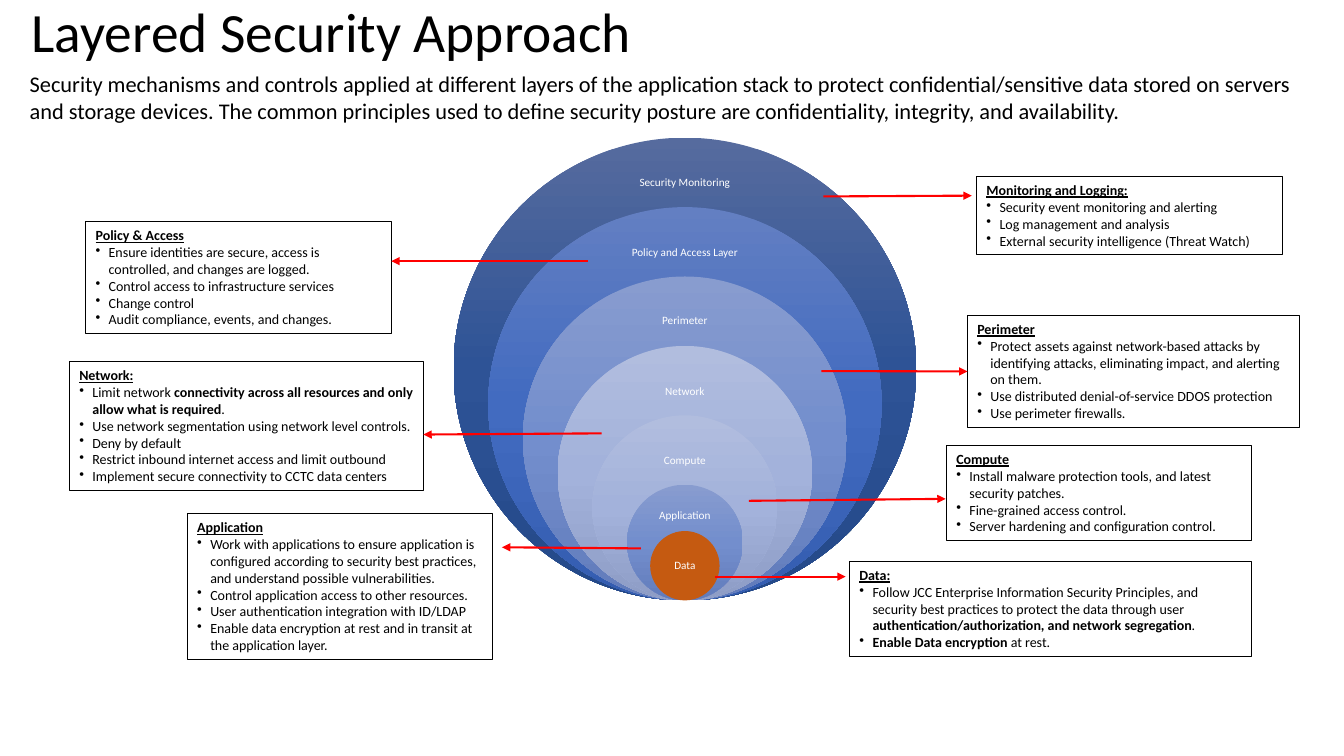
from copy import deepcopy
from dataclasses import dataclass

from lxml.etree import SubElement
from pptx import Presentation
from pptx.dml.color import RGBColor
from pptx.enum.shapes import MSO_CONNECTOR, MSO_SHAPE
from pptx.enum.text import MSO_ANCHOR, PP_ALIGN
from pptx.oxml.ns import qn
from pptx.util import Cm, Pt


@dataclass(frozen=True)
class Theme:
    font: str = "Calibri"
    text: str = "000000"
    label: str = "FFFFFF"
    arrow: str = "FF0000"
    core: str = "C55A11"
    deep: tuple = ("566B9E", "2E5396", "244989")
    strong: tuple = ("637FC2", "426BC0", "345DB1")
    medium: tuple = ("889CCF", "738ECD", "627CBB")
    pale: tuple = ("B1BDDE", "A3B2DB", "8E9DC6")
    title_size: float = 39.6
    intro_size: float = 16
    callout_size: float = 10
    label_size: float = 8
    border_width: float = 0.75
    arrow_width: float = 1.5


@dataclass(frozen=True)
class Box:
    left: float
    top: float
    width: float
    height: float

    def lengths(self):
        return Cm(self.left), Cm(self.top), Cm(self.width), Cm(self.height)


@dataclass(frozen=True)
class Arrow:
    side: str
    reach: float
    gap: float
    start_drop: float
    tip_drop: float


THEME = Theme()
TITLE = "Layered Security Approach"
INTRO = (
    "Security mechanisms and controls applied at different layers of the application stack to protect "
    "confidential/sensitive data stored on servers and storage devices. The common principles used to define "
    "security posture are confidentiality, integrity, and availability."
)
RINGS = [
    ("Security Monitoring", 1, 1.15, 4.37, THEME.deep),
    ("Policy and Access Layer", 0.85, 1.15, 4.27, THEME.strong),
    ("Perimeter", 0.7, 1.12, 4.22, THEME.medium),
    ("Network", 0.55, 1.15, 3.45, THEME.pale),
    ("Compute", 0.4, 1.16, 3.02, THEME.pale),
    ("Application", 0.25, 0.78, 1.98, THEME.medium),
    ("Data", 0.15, 0.87, 1.24, None),
]
CALLOUTS = [
    (Box(21.41, 14.15, 10.13, 2.39), Arrow("left", 3.38, 0.1, 0.38, 0.38), "Data:", [
        "Follow JCC Enterprise Information Security Principles, and security best practices to protect the data "
        "through user **authentication/authorization, and network segregation**.",
        "**Enable Data encryption **at rest.",
    ]),
    (Box(4.72, 12.95, 7.7, 3.68), Arrow("right", 3.73, 0.23, 0.87, 0.84), "Application", [
        "Work with applications to ensure application is configured according to security best practices, "
        "and understand possible vulnerabilities.",
        "Control application access to other resources.",
        "User authentication integration with ID/LDAP",
        "Enable data encryption at rest and in transit at the application layer.",
    ]),
    (Box(23.85, 11.23, 7.7, 2.39), Arrow("left", 4.98, 0.02, 1.39, 1.34), "Compute", [
        "Install malware protection tools, and latest security patches.",
        "Fine-grained access control.",
        "Server hardening and configuration control.",
    ]),
    (Box(1.75, 9.12, 8.92, 3.25), Arrow("right", 4.49, 0, 1.8, 1.83), "Network:", [
        "Limit network **connectivity across all resources and only allow what is required**.",
        "Use network segmentation using network level controls.",
        "Deny by default",
        "Restrict inbound internet access and limit outbound",
        "Implement secure connectivity to CCTC data centers",
    ]),
    (Box(24.38, 7.95, 8.36, 2.82), Arrow("left", 3.68, 0, 1.4, 1.41), "Perimeter", [
        "Protect assets against network-based attacks by identifying attacks, eliminating impact, "
        "and alerting on them.",
        "Use distributed denial-of-service DDOS protection",
        "Use perimeter firewalls.",
    ]),
    (Box(2.16, 5.59, 7.7, 2.82), Arrow("right", 4.95, 0, 0.99, 0.99), "Policy & Access", [
        "Ensure identities are secure, access is controlled, and changes are logged.",
        "Control access to infrastructure services",
        "Change control",
        "Audit compliance, events, and changes.",
    ]),
    (Box(24.61, 4.45, 7.7, 1.96), Arrow("left", 3.86, 0.12, 0.5, 0.48), "Monitoring and Logging:", [
        "Security event monitoring and alerting",
        "Log management and analysis",
        "External security intelligence (Threat Watch)",
    ]),
]


def apply_format(target, values):
    for name, value in values.items():
        setattr(target, name, value)


def add_run(paragraph, text, size, color, **values):
    run = paragraph.add_run()
    run.text = text
    apply_format(run.font, {"name": THEME.font, "size": Pt(size), **values})
    run.font.color.rgb = RGBColor.from_string(color)


def add_text(shapes, box, text, size, color, frame_format, paragraph_format):
    frame = shapes.add_textbox(*box.lengths()).text_frame
    apply_format(frame, {"word_wrap": True, **frame_format})
    paragraph = frame.paragraphs[0]
    apply_format(paragraph, paragraph_format)
    add_run(paragraph, text, size, color)


def add_heading(slide, box):
    title_box = Box(box.left + 0.05, box.top, 29.21, 1.14)
    intro_box = Box(box.left, box.top + 1.35, box.width, box.height - 1.35)
    add_text(slide.shapes, title_box, TITLE, THEME.title_size, THEME.text,
             {"vertical_anchor": MSO_ANCHOR.MIDDLE}, {"line_spacing": 0.9})
    add_text(slide.shapes, intro_box, INTRO, THEME.intro_size, THEME.text, {}, {})


def fill_ring(ring, colors):
    if colors is None:
        ring.fill.solid()
        ring.fill.fore_color.rgb = RGBColor.from_string(THEME.core)
        return
    ring.fill.gradient()
    ring.fill.gradient_angle = 270
    stop_list = ring._element.spPr.find(".//" + qn("a:gsLst"))
    stop_list.insert(1, deepcopy(stop_list[0]))
    for stop, color, position in zip(ring.fill.gradient_stops, colors, (0, 0.5, 1)):
        stop.color.rgb = RGBColor.from_string(color)
        stop.position = position


def add_rings(slide, box):
    shapes = slide.shapes.add_group_shape().shapes
    center = box.left + box.width / 2
    margins = ("margin_left", "margin_top", "margin_right", "margin_bottom")
    frame_format = {"vertical_anchor": MSO_ANCHOR.MIDDLE, **dict.fromkeys(margins, Cm(0.15))}
    for name, scale, label_drop, label_width, colors in RINGS:
        diameter = box.width * scale
        top = box.top + box.height - diameter
        ring_box = Box(center - diameter / 2, top, diameter, diameter)
        ring = shapes.add_shape(MSO_SHAPE.OVAL, *ring_box.lengths())
        ring.shadow.inherit = False
        ring.line.fill.background()
        fill_ring(ring, colors)
        label_box = Box(center - label_width / 2, top + label_drop - 0.4, label_width, 0.8)
        add_text(shapes, label_box, name, THEME.label_size, THEME.label, frame_format,
                 {"alignment": PP_ALIGN.CENTER, "line_spacing": 0.9})


def add_bullet(frame, text):
    paragraph = frame.add_paragraph()
    paragraph.alignment = PP_ALIGN.LEFT
    properties = paragraph._p.get_or_add_pPr()
    properties.set("marL", str(Cm(0.33)))
    properties.set("indent", str(-Cm(0.33)))
    SubElement(properties, qn("a:buChar"), char="•")
    for index, part in enumerate(text.split("**")):
        if part:
            add_run(paragraph, part, THEME.callout_size, THEME.text, bold=index % 2 == 1)


def add_arrow(slide, box, arrow, rectangle):
    edge, direction, site = (box.left, -1, 1) if arrow.side == "left" else (box.left + box.width, 1, 3)
    connector = slide.shapes.add_connector(
        MSO_CONNECTOR.STRAIGHT,
        Cm(edge + direction * arrow.reach), Cm(box.top + arrow.start_drop),
        Cm(edge + direction * arrow.gap), Cm(box.top + arrow.tip_drop),
    )
    if arrow.gap == 0 and arrow.tip_drop == box.height / 2:
        connector.end_connect(rectangle, site)
    connector.line.color.rgb = RGBColor.from_string(THEME.arrow)
    connector.line.width = Pt(THEME.arrow_width)
    SubElement(connector.line._get_or_add_ln(), qn("a:tailEnd"), type="triangle")
    SubElement(connector._element.spPr, qn("a:effectLst"))


def add_callout(slide, box, arrow, heading, items):
    rectangle = slide.shapes.add_shape(MSO_SHAPE.RECTANGLE, *box.lengths())
    rectangle.shadow.inherit = False
    rectangle.fill.background()
    rectangle.line.color.rgb = RGBColor.from_string(THEME.text)
    rectangle.line.width = Pt(THEME.border_width)
    frame = rectangle.text_frame
    apply_format(frame, {"word_wrap": True, "vertical_anchor": MSO_ANCHOR.TOP})
    paragraph = frame.paragraphs[0]
    paragraph.alignment = PP_ALIGN.LEFT
    add_run(paragraph, heading, THEME.callout_size, THEME.text, bold=True, underline=True)
    for item in items:
        add_bullet(frame, item)
    add_arrow(slide, box, arrow, rectangle)


def main():
    presentation = Presentation()
    apply_format(presentation, {"slide_width": Cm(33.87), "slide_height": Cm(19.05)})
    slide = presentation.slides.add_slide(presentation.slide_layouts[6])
    add_heading(slide, Box(0.5, 0.3, 32.85, 2.98))
    add_rings(slide, Box(11.43, 3.47, 11.66, 11.66))
    for callout in CALLOUTS:
        add_callout(slide, *callout)
    presentation.save("out.pptx")


if __name__ == "__main__":
    main()
